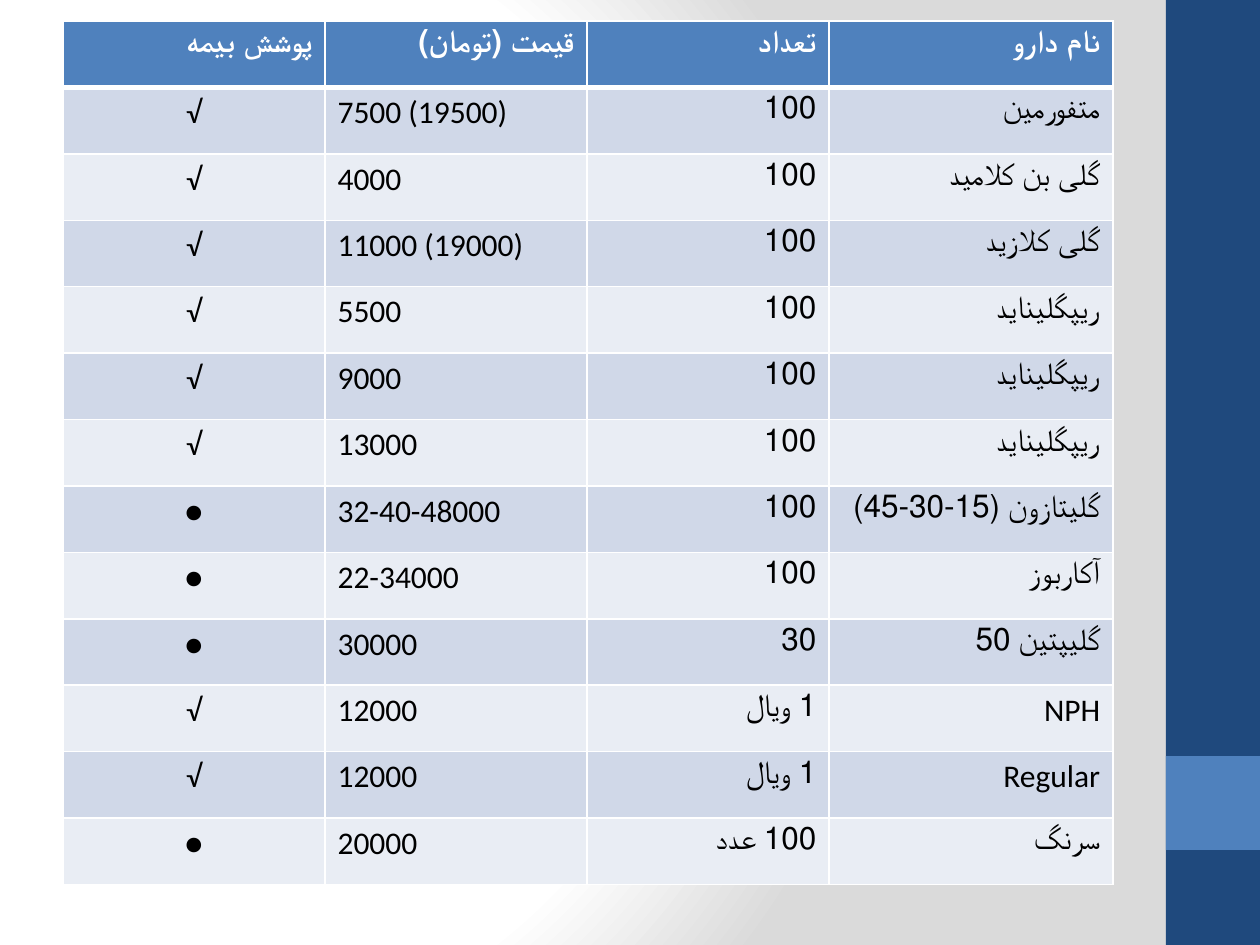
import pptx
import pptx.dml.color
import pptx.enum.shapes
import pptx.enum.text
import pptx.oxml
import pptx.oxml.ns
import pptx.util

HEADINGS = ("پوشش بیمه", "قیمت (تومان)", "تعداد", "نام دارو")
YES, NO = "√", "●"
DRUGS = [
    (YES, "7500 (19500)", "100", "متفورمین"),
    (YES, "4000", "100", "گلی بن کلامید"),
    (YES, "11000 (19000)", "100", "گلی کلازید"),
    (YES, "5500", "100", "ریپگلیناید"),
    (YES, "9000", "100", "ریپگلیناید"),
    (YES, "13000", "100", "ریپگلیناید"),
    (NO, "32-40-48000", "100", "گلیتازون (15-30-45)"),
    (NO, "22-34000", "100", "آکاربوز"),
    (NO, "30000", "30", "گلیپتین 50"),
    (YES, "12000", "1 ویال", "NPH"),
    (YES, "12000", "1 ویال", "Regular"),
    (NO, "20000", "100 عدد", "سرنگ"),
]
THEME = {
    "font": "Calibri", "size": 18,
    "navy": "1F497D", "blue": "4F81BD", "white": "FFFFFF", "black": "000000",
    "grey": "DADADA", "bands": ("D0D8E8", "E9EDF4"),
}
PX = 914400 // 126
SLIDE = (1260, 945)
SIDEBAR = [((1166, 0, 94, 945), "navy"), ((1166, 756, 94, 94), "blue")]
TABLE = (63, 21, 1050, 864)
COLUMNS = (262, 262, 242, 284)
ALIGN = pptx.enum.text.PP_ALIGN
BODY_ALIGN = (ALIGN.CENTER, ALIGN.LEFT, ALIGN.RIGHT, ALIGN.RIGHT)
NS = pptx.oxml.ns.nsdecls("a", "p")


def emu(*lengths):
    return [pptx.util.Emu(round(length * PX)) for length in lengths]


def paint(fill, colour):
    fill.solid()
    fill.fore_color.rgb = pptx.dml.color.RGBColor.from_string(colour)


def set_background(page):
    """Radial fade from white to grey, centred left of the middle."""
    stops = "".join(
        f'<a:gs pos="{percent * 1000}"><a:srgbClr val="{THEME[name]}"/></a:gs>'
        for percent, name in ((0, "white"), (75, "white"), (100, "grey")))
    page.element.cSld.insert(0, pptx.oxml.parse_xml(
        f'<p:bg {NS}><p:bgPr><a:gradFill rotWithShape="1"><a:gsLst>{stops}</a:gsLst>'
        '<a:path path="circle"><a:fillToRect l="20000" t="50000" r="100000" b="50000"/>'
        '</a:path></a:gradFill><a:effectLst/></p:bgPr></p:bg>'))


def add_bar(page, place, colour):
    kind = pptx.enum.shapes.MSO_SHAPE.RECTANGLE
    bar = page.shapes.add_shape(kind, *emu(*place))
    bar.shadow.inherit = False
    paint(bar.fill, THEME[colour])
    bar.line.fill.background()


def set_borders(cell, top, bottom):
    """White borders; top and bottom widths in points, sides 1 pt."""
    properties = cell._tc.get_or_add_tcPr()
    for side, width in (("L", 1), ("R", 1), ("T", top), ("B", bottom)):
        properties.append(pptx.oxml.parse_xml(
            f'<a:ln{side} {NS} w="{width * 12700}"><a:solidFill>'
            f'<a:srgbClr val="{THEME["white"]}"/></a:solidFill></a:ln{side}>'))


def fill_cell(cell, text, align, fill, colour, bold):
    paint(cell.fill, fill)
    para = cell.text_frame.paragraphs[0]
    para.alignment = align
    if align == ALIGN.RIGHT:
        para._p.get_or_add_pPr().set("rtl", "1")
    span = para.add_run()
    span.text = text
    span.font.name = THEME["font"]
    span.font.size = pptx.util.Pt(THEME["size"])
    span.font.bold = bold
    span.font.color.rgb = pptx.dml.color.RGBColor.from_string(colour)


def add_price_table(page):
    rows = [HEADINGS] + DRUGS
    table = page.shapes.add_table(len(rows), len(COLUMNS), *emu(*TABLE)).table
    for column, width in zip(table.columns, COLUMNS):
        column.width = emu(width)[0]
    for row in table.rows:
        row.height = emu(TABLE[3] / len(rows))[0]
    for r, texts in enumerate(rows):
        header = r == 0
        fill = THEME["blue"] if header else THEME["bands"][(r - 1) % 2]
        colour = THEME["white"] if header else THEME["black"]
        for c, text in enumerate(texts):
            cell = table.cell(r, c)
            set_borders(cell, 3 if r == 1 else 1, 3 if header else 1)
            align = ALIGN.RIGHT if header else BODY_ALIGN[c]
            fill_cell(cell, text, align, fill, colour, header)


def main():
    deck = pptx.Presentation()
    deck.slide_width, deck.slide_height = emu(*SLIDE)
    page = deck.slides.add_slide(deck.slide_layouts[6])
    set_background(page)
    for place, colour in SIDEBAR:
        add_bar(page, place, colour)
    add_price_table(page)
    deck.save("out.pptx")


if __name__ == "__main__":
    main()
